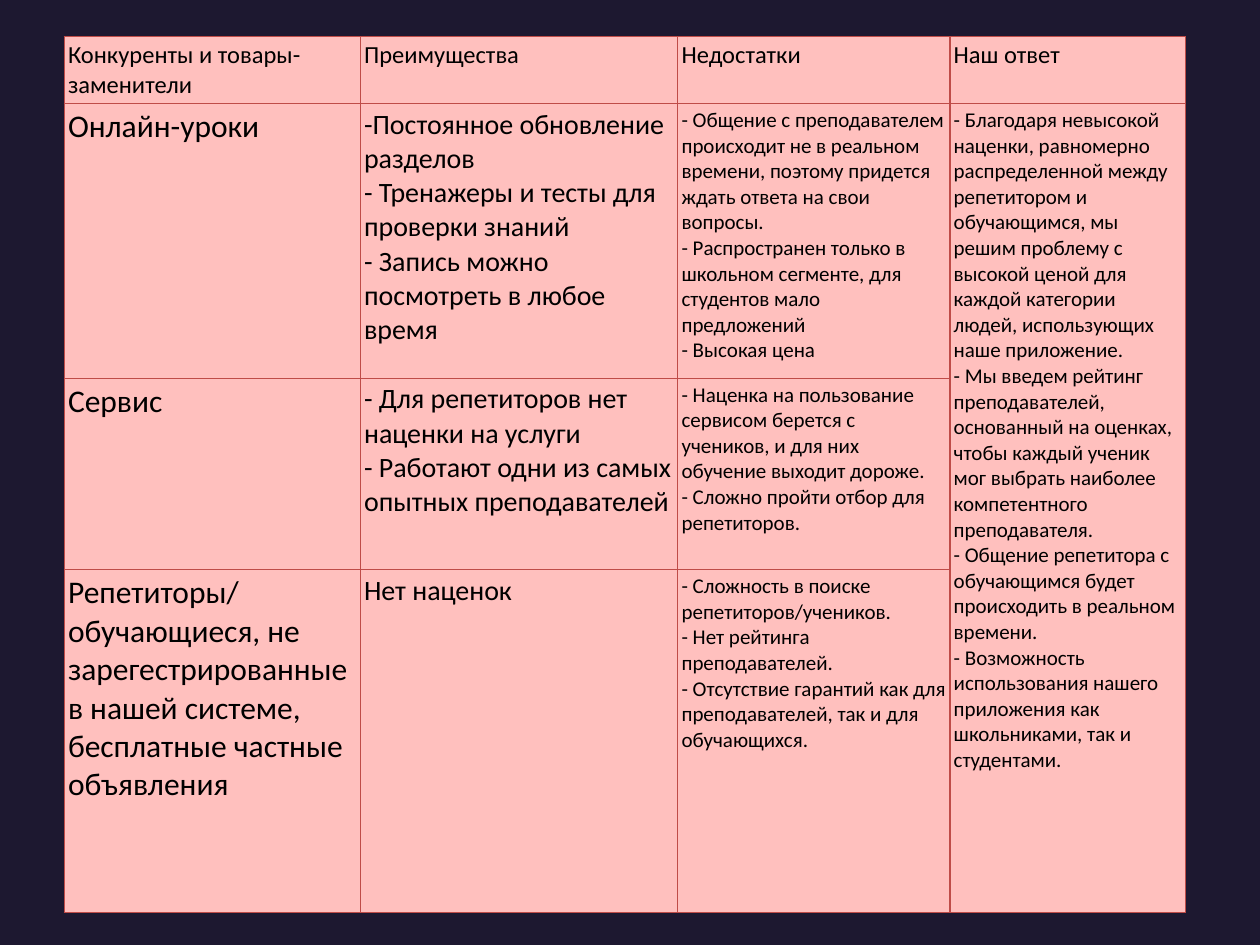
from dataclasses import dataclass

from lxml.etree import SubElement
from pptx import Presentation
from pptx.dml.color import RGBColor
from pptx.oxml.ns import qn
from pptx.util import Inches, Pt


@dataclass(frozen=True)
class Theme:
    background: str = "1D1830"
    cell: str = "FFC0BE"
    border: str = "BF4C48"
    text: str = "000000"
    font: str = "Calibri"
    header_size: int = 14
    name_size: int = 18
    pros_size: int = 16
    detail_size: int = 12
    border_width: float = 0.75
    margin: float = 0.03


@dataclass(frozen=True)
class Competitor:
    name: str
    pros: tuple[str, ...]
    cons: tuple[str, ...]


THEME = Theme()
COL_WIDTHS = (2.35, 2.52, 2.16, 1.87)
ROW_HEIGHTS = (0.51, 2.18, 1.52, 2.72)
HEADERS = ("Конкуренты и товары-заменители", "Преимущества", "Недостатки", "Наш ответ")

COMPETITORS = (
    Competitor(
        "Онлайн-уроки",
        ("-Постоянное обновление разделов",
         "- Тренажеры и тесты для проверки знаний",
         "- Запись можно посмотреть в любое время"),
        ("- Общение с преподавателем происходит не в реальном времени, "
         "поэтому придется ждать ответа на свои вопросы.",
         "- Распространен только в школьном сегменте, для студентов мало предложений",
         "- Высокая цена"),
    ),
    Competitor(
        "Сервис",
        ("- Для репетиторов нет наценки на услуги",
         "- Работают одни из самых опытных преподавателей"),
        ("- Наценка на пользование сервисом берется с учеников, "
         "и для них обучение выходит дороже.",
         "- Сложно пройти отбор для репетиторов."),
    ),
    Competitor(
        "Репетиторы/обучающиеся, не зарегестрированные в нашей системе, "
        "бесплатные частные объявления",
        ("Нет наценок",),
        ("- Сложность в поиске репетиторов/учеников.",
         "- Нет рейтинга преподавателей.",
         "- Отсутствие гарантий как для преподавателей, так и для обучающихся."),
    ),
)

OUR_ANSWER = (
    "- Благодаря невысокой наценки, равномерно распределенной между репетитором "
    "и обучающимся, мы решим проблему с высокой ценой для каждой категории людей, "
    "использующих наше приложение.",
    "- Мы введем рейтинг преподавателей, основанный на оценках, чтобы каждый ученик "
    "мог выбрать наиболее компетентного преподавателя.",
    "- Общение репетитора с обучающимся будет происходить в реальном времени.",
    "- Возможность использования нашего приложения как школьниками, так и студентами.",
)


def style_cell(cell) -> None:
    """Set margins, borders and fill; borders must precede the fill in the XML."""
    cell.margin_left = cell.margin_right = Inches(THEME.margin)
    cell.margin_top = cell.margin_bottom = Inches(THEME.margin)
    tc_pr = cell._tc.get_or_add_tcPr()
    for side in ("lnL", "lnR", "lnT", "lnB"):
        ln = SubElement(tc_pr, qn(f"a:{side}"), w=str(Pt(THEME.border_width)))
        fill = SubElement(ln, qn("a:solidFill"))
        SubElement(fill, qn("a:srgbClr"), val=THEME.border)
    cell.fill.solid()
    cell.fill.fore_color.rgb = RGBColor.from_string(THEME.cell)


def write_cell(cell, lines: tuple[str, ...], size: int) -> None:
    tf = cell.text_frame
    tf.text = "\n".join(lines)
    for p in tf.paragraphs:
        p.font.name = THEME.font
        p.font.size = Pt(size)
        p.font.color.rgb = RGBColor.from_string(THEME.text)


def add_comparison(s) -> None:
    table = s.shapes.add_table(
        len(ROW_HEIGHTS), len(COL_WIDTHS), Inches(0.51), Inches(0.29),
        Inches(sum(COL_WIDTHS)), Inches(sum(ROW_HEIGHTS))).table
    table.first_row = table.horz_banding = False
    for column, width in zip(table.columns, COL_WIDTHS):
        column.width = Inches(width)
    for row, height in zip(table.rows, ROW_HEIGHTS):
        row.height = Inches(height)
    for cell in table.iter_cells():
        style_cell(cell)

    # Header row
    for col, header in enumerate(HEADERS):
        write_cell(table.cell(0, col), (header,), THEME.header_size)

    # One row per competitor
    for row, rival in enumerate(COMPETITORS, start=1):
        write_cell(table.cell(row, 0), (rival.name,), THEME.name_size)
        write_cell(table.cell(row, 1), rival.pros, THEME.pros_size)
        write_cell(table.cell(row, 2), rival.cons, THEME.detail_size)

    # Shared answer spanning all competitors
    answer = table.cell(1, 3)
    answer.merge(table.cell(len(COMPETITORS), 3))
    write_cell(answer, OUR_ANSWER, THEME.detail_size)


def main() -> None:
    prs = Presentation()
    prs.slide_width, prs.slide_height = Inches(10), Inches(7.5)
    s = prs.slides.add_slide(prs.slide_layouts[6])
    s.background.fill.solid()
    s.background.fill.fore_color.rgb = RGBColor.from_string(THEME.background)
    add_comparison(s)
    prs.save("out.pptx")


if __name__ == "__main__":
    main()
